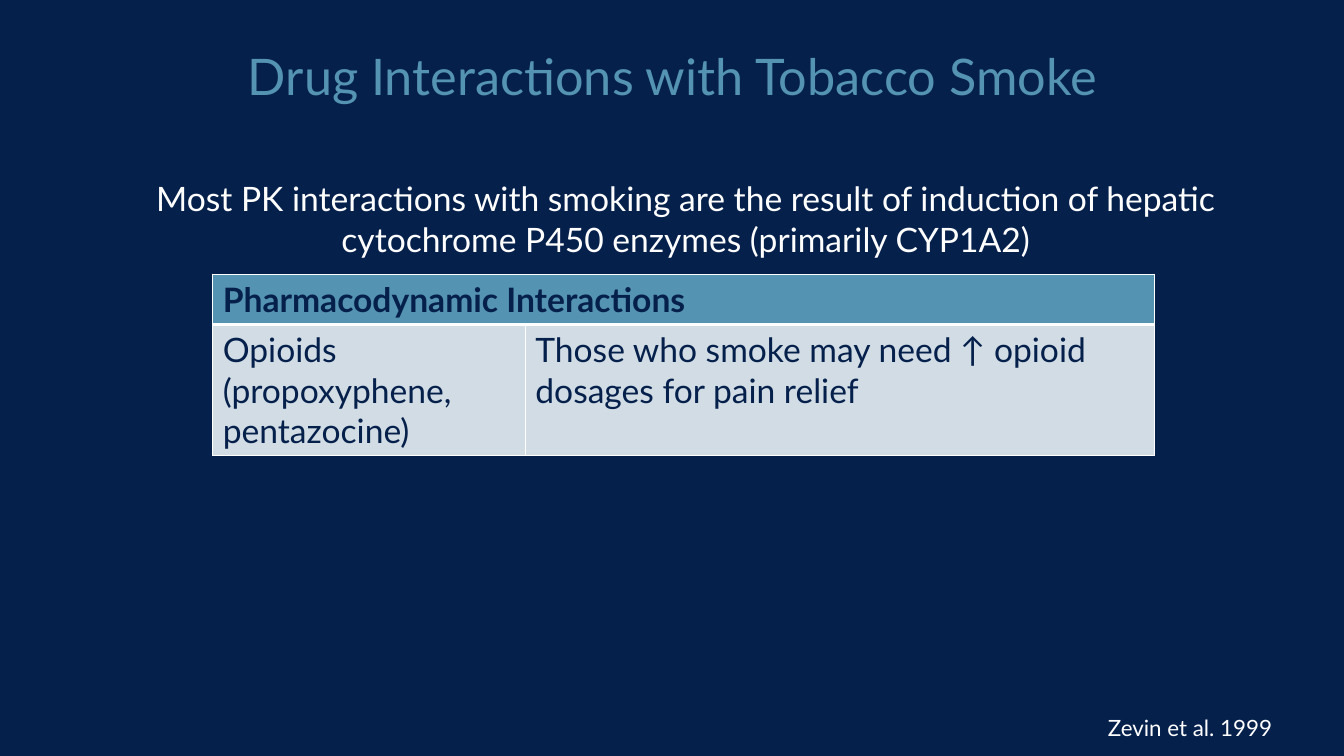
from lxml.etree import SubElement
from pptx import Presentation
from pptx.dml.color import RGBColor
from pptx.enum.text import MSO_ANCHOR as Anchor, PP_ALIGN as Align
from pptx.oxml.ns import qn
from pptx.util import Inches, Pt

NAVY, BLUE, PALE, WHITE = "06204C", "5493B2", "D1DCE4", "FFFFFF"
TITLE = "Drug Interactions with Tobacco Smoke"
SUMMARY = ("Most PK interactions with smoking are the result of induction of hepatic "
           "cytochrome P450 enzymes (primarily CYP1A2)")
CITATION = "Zevin et al. 1999"
HEADING = "Pharmacodynamic Interactions"
INTERACTION = ["Opioids (propoxyphene, pentazocine)",
               "Those who smoke may need ↑ opioid dosages for pain relief"]
TABLE_LEFT, TABLE_TOP = 2.11, 2.72
COLUMN_WIDTHS = [3.1, 6.24]
ROW_HEIGHTS = [0.5, 1.3]


def color(value):
    return RGBColor.from_string(value)


def write(frame, text, size=24, fill=WHITE, bold=False, align=Align.LEFT):
    frame.word_wrap = True
    paragraph = frame.paragraphs[0]
    paragraph.alignment = align
    run = paragraph.add_run()
    run.text = text
    run.font.name = "Lato"
    run.font.size = Pt(size)
    run.font.bold = bold
    run.font.color.rgb = color(fill)


def add_text(slide, box, text, **style):
    frame = slide.shapes.add_textbox(*map(Inches, box)).text_frame
    write(frame, text, **style)
    return frame


def set_borders(cell, **widths):
    properties = cell._tc.get_or_add_tcPr()
    for index, side in enumerate("LRTB"):
        line = SubElement(properties, qn(f"a:ln{side}"), w=str(Pt(widths.get(side, 1))))
        fill = SubElement(line, qn("a:solidFill"))
        SubElement(fill, qn("a:srgbClr"), val=WHITE)
        properties.insert(index, line)


def fill_cell(cell, text, fill, bold=False):
    cell.fill.solid()
    cell.fill.fore_color.rgb = color(fill)
    write(cell.text_frame, text, fill=NAVY, bold=bold)


def add_interactions(slide):
    table = slide.shapes.add_table(
        len(ROW_HEIGHTS), len(COLUMN_WIDTHS), Inches(TABLE_LEFT), Inches(TABLE_TOP),
        Inches(sum(COLUMN_WIDTHS)), Inches(sum(ROW_HEIGHTS))).table
    for column, width in zip(table.columns, COLUMN_WIDTHS):
        column.width = Inches(width)
    for row, height in zip(table.rows, ROW_HEIGHTS):
        row.height = Inches(height)
    table.cell(0, 0).merge(table.cell(0, 1))
    fill_cell(table.cell(0, 0), HEADING, BLUE, bold=True)
    for index, text in enumerate(INTERACTION):
        fill_cell(table.cell(1, index), text, PALE)
        set_borders(table.cell(0, index), B=3)
        set_borders(table.cell(1, index), T=3)


def main():
    presentation = Presentation()
    presentation.slide_width = Inches(13.33)
    presentation.slide_height = Inches(7.5)
    slide = presentation.slides.add_slide(presentation.slide_layouts[6])
    slide.background.fill.solid()
    slide.background.fill.fore_color.rgb = color(NAVY)
    title = add_text(slide, (0.67, 0.25, 12, 1), TITLE, size=36, fill=BLUE, align=Align.CENTER)
    title.vertical_anchor = Anchor.MIDDLE
    add_interactions(slide)
    add_text(slide, (1.24, 1.72, 11.12, 0.91), SUMMARY, align=Align.CENTER)
    add_text(slide, (10.89, 7.04, 2.44, 0.37), CITATION, size=16)
    presentation.save("out.pptx")


if __name__ == "__main__":
    main()
